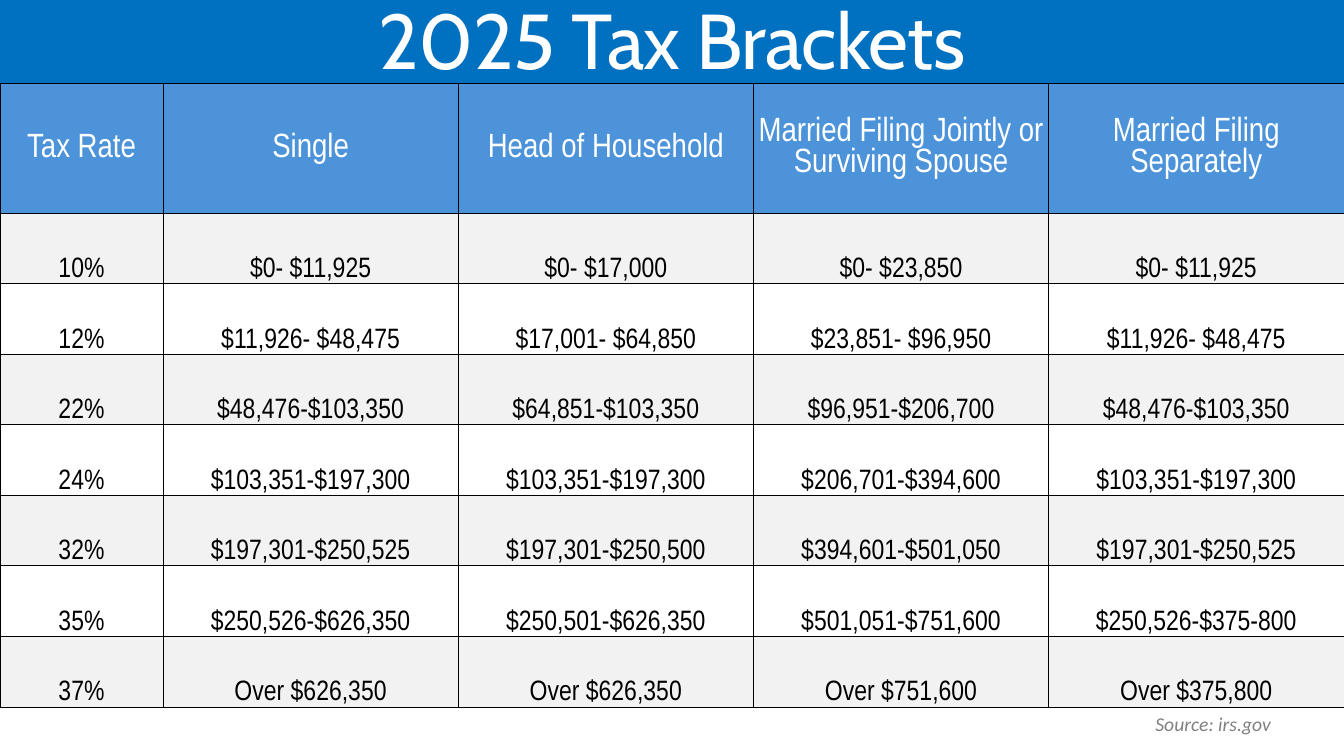
from lxml.etree import SubElement
from pptx import Presentation
from pptx.dml.color import RGBColor
from pptx.enum.shapes import MSO_SHAPE
from pptx.enum.text import MSO_ANCHOR, MSO_AUTO_SIZE, PP_ALIGN
from pptx.oxml.ns import qn
from pptx.util import Pt

TITLE = "2025 Tax Brackets"
SOURCE = "Source: irs.gov"
HEADERS = ["Tax Rate", "Single", "Head of Household",
           "Married Filing Jointly or Surviving Spouse", "Married Filing Separately"]
BRACKETS = [
    ("10%", "$0- $11,925", "$0- $17,000", "$0- $23,850", "$0- $11,925"),
    ("12%", "$11,926- $48,475", "$17,001- $64,850", "$23,851- $96,950", "$11,926- $48,475"),
    ("22%", "$48,476-$103,350", "$64,851-$103,350", "$96,951-$206,700", "$48,476-$103,350"),
    ("24%", "$103,351-$197,300", "$103,351-$197,300", "$206,701-$394,600", "$103,351-$197,300"),
    ("32%", "$197,301-$250,525", "$197,301-$250,500", "$394,601-$501,050", "$197,301-$250,525"),
    ("35%", "$250,526-$626,350", "$250,501-$626,350", "$501,051-$751,600", "$250,526-$375-800"),
    ("37%", "Over $626,350", "Over $626,350", "Over $751,600", "Over $375,800"),
]

TITLE_BLUE = RGBColor(0x00, 0x70, 0xC0)
HEADER_BLUE = RGBColor(0x4D, 0x93, 0xD9)
BAND_GRAY = RGBColor(0xF2, 0xF2, 0xF2)
SOURCE_GRAY = RGBColor(0x80, 0x80, 0x80)
WHITE = RGBColor(0xFF, 0xFF, 0xFF)
BLACK = RGBColor(0x00, 0x00, 0x00)

SLIDE_WIDTH, SLIDE_HEIGHT = 1344, 756
TITLE_HEIGHT = 94
TABLE_TOP, TABLE_HEIGHT, HEADER_HEIGHT = 83, 624, 130
RATE_WIDTH = 163


def px(length):
    return round(length * 914400 / 100.8)


def add_text(frame, text, font_name, size, color, alignment):
    paragraph = frame.paragraphs[0]
    paragraph.alignment = alignment
    run = paragraph.add_run()
    run.text = text
    run.font.name = font_name
    run.font.size = Pt(size)
    run.font.color.rgb = color
    return paragraph, run


def add_borders(cell):
    properties = cell._tc.get_or_add_tcPr()
    for side in ("a:lnL", "a:lnR", "a:lnT", "a:lnB"):
        line = SubElement(properties, qn(side), w=str(Pt(0.5)))
        fill = SubElement(line, qn("a:solidFill"))
        SubElement(fill, qn("a:srgbClr"), val=str(BLACK))


def add_title(slide):
    bar = slide.shapes.add_shape(MSO_SHAPE.RECTANGLE, 0, 0, px(SLIDE_WIDTH), px(TITLE_HEIGHT))
    bar.shadow.inherit = False
    bar.fill.solid()
    bar.fill.fore_color.rgb = TITLE_BLUE
    bar.line.fill.background()
    bar.text_frame.vertical_anchor = MSO_ANCHOR.MIDDLE
    paragraph, run = add_text(bar.text_frame, TITLE, "Cabin", 55.5, WHITE, PP_ALIGN.CENTER)
    paragraph.line_spacing = 0.8
    run.font._element.set("spc", "-60")


def add_source(slide):
    box = slide.shapes.add_textbox(px(1144), px(707), px(137), px(34))
    box.text_frame.word_wrap = False
    box.text_frame.auto_size = MSO_AUTO_SIZE.SHAPE_TO_FIT_TEXT
    run = add_text(box.text_frame, SOURCE, "Calibri", 14, SOURCE_GRAY, PP_ALIGN.RIGHT)[1]
    run.font.italic = True


def add_bracket_table(slide):
    rows = [HEADERS, *BRACKETS]
    table = slide.shapes.add_table(len(rows), len(HEADERS), 0, px(TABLE_TOP),
                                   px(SLIDE_WIDTH), px(TABLE_HEIGHT)).table
    status_width = (SLIDE_WIDTH - RATE_WIDTH) / (len(HEADERS) - 1)
    body_height = (TABLE_HEIGHT - HEADER_HEIGHT) / len(BRACKETS)
    for index, column in enumerate(table.columns):
        column.width = px(status_width if index else RATE_WIDTH)
    for row_index, values in enumerate(rows):
        is_header = row_index == 0
        table.rows[row_index].height = px(HEADER_HEIGHT if is_header else body_height)
        band = HEADER_BLUE if is_header else BAND_GRAY if row_index % 2 else WHITE
        size, color = (24, WHITE) if is_header else (20, BLACK)
        for column_index, value in enumerate(values):
            cell = table.cell(row_index, column_index)
            cell.margin_left = cell.margin_right = cell.margin_top = px(1)
            cell.margin_bottom = 0
            cell.vertical_anchor = MSO_ANCHOR.MIDDLE if is_header else MSO_ANCHOR.BOTTOM
            add_borders(cell)
            cell.fill.solid()
            cell.fill.fore_color.rgb = band
            run = add_text(cell.text_frame, value, "Arial Narrow", size, color, PP_ALIGN.CENTER)[1]
            run.font.bold = False


def main():
    presentation = Presentation()
    presentation.slide_width = px(SLIDE_WIDTH)
    presentation.slide_height = px(SLIDE_HEIGHT)
    slide = presentation.slides.add_slide(presentation.slide_layouts[6])
    add_title(slide)
    add_source(slide)
    add_bracket_table(slide)
    presentation.save("out.pptx")


if __name__ == "__main__":
    main()
